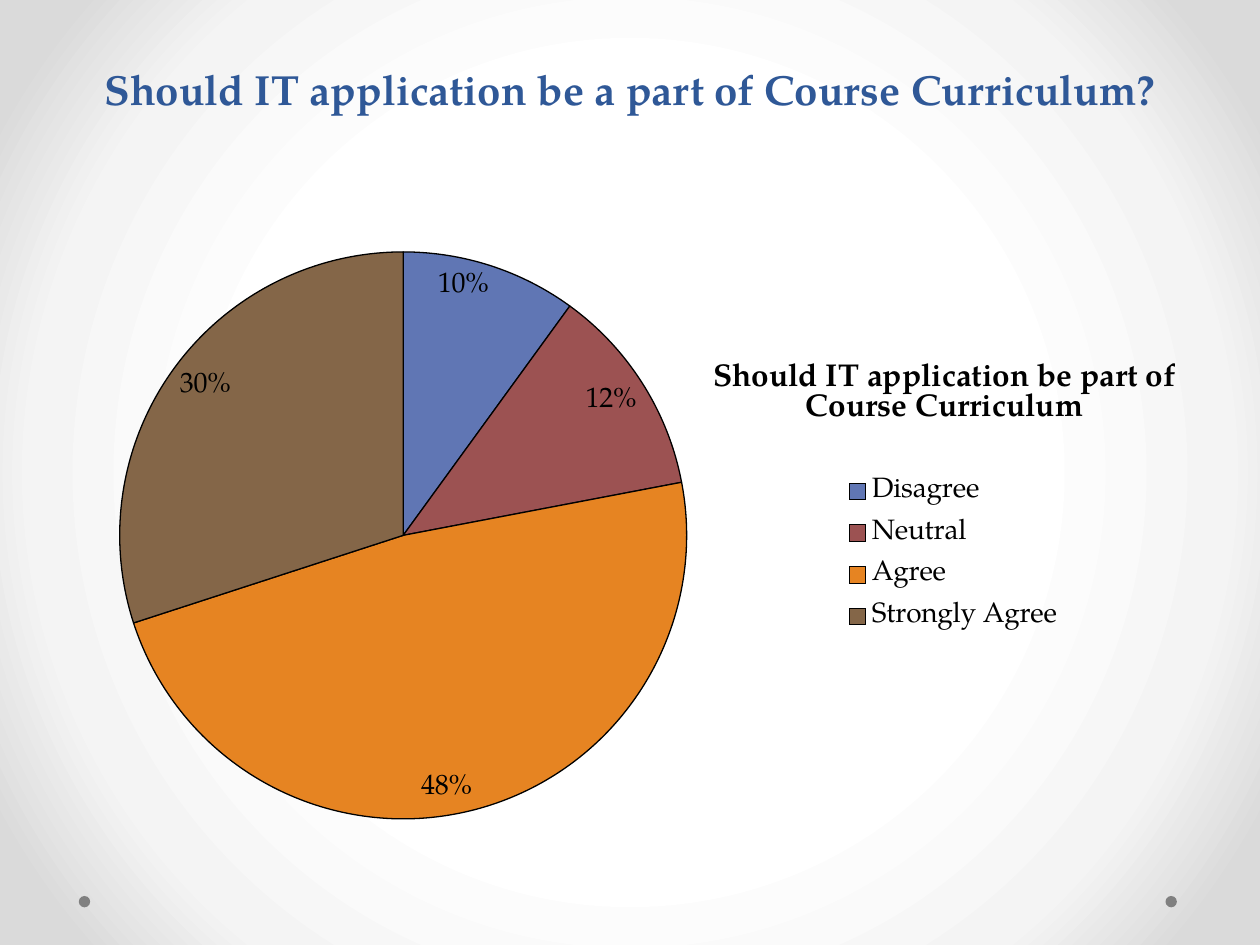
from pptx import Presentation
from pptx.chart.data import CategoryChartData
from pptx.dml.color import RGBColor
from pptx.enum.chart import XL_CHART_TYPE, XL_LABEL_POSITION, XL_LEGEND_POSITION
from pptx.enum.shapes import MSO_SHAPE
from pptx.enum.text import MSO_ANCHOR, PP_ALIGN
from pptx.oxml import parse_xml
from pptx.oxml.ns import nsdecls
from pptx.util import Pt

FONT = "TeX Gyre Pagella"


def rgb(value):
    return RGBColor.from_string(value)


def set_layout(element, x, y, w=None, h=None, inner=False):
    """Place a chart part by fractions of the chart area."""
    target = '<c:layoutTarget val="inner"/>' if inner else ""
    modes = '<c:xMode val="edge"/><c:yMode val="edge"/>'
    sizes = "".join(f'<c:{tag} val="{val}"/>'
                    for tag, val in zip("xywh", (x, y, w, h)) if val is not None)
    layout = element.get_or_add_layout() if hasattr(element, "get_or_add_layout") else None
    if layout is None:
        layout = element.find("{*}layout")
    new = parse_xml(f'<c:layout {nsdecls("c")}><c:manualLayout>'
                    f'{target}{modes}{sizes}</c:manualLayout></c:layout>')
    if layout is not None:
        element.replace(layout, new)
    else:
        element.insert(0 if inner else 1, new)


prs = Presentation()
prs.slide_width, prs.slide_height = Pt(720), Pt(540)
s = prs.slides.add_slide(prs.slide_layouts[6])

# Radial background
s.background.fill.solid()
bg = s.element.xpath("p:cSld/p:bg/p:bgPr")[0]
stops = "".join(f'<a:gs pos="{pos}000"><a:srgbClr val="{color}"/></a:gs>'
                for pos, color in ((50, "FFFFFF"), (76, "F4F4F4"), (92, "DADADA")))
bg.replace(bg[0], parse_xml(
    f'<a:gradFill {nsdecls("a")} rotWithShape="1"><a:gsLst>{stops}</a:gsLst>'
    '<a:path path="circle"><a:fillToRect l="50000" t="50000" r="50000" b="50000"/>'
    '</a:path></a:gradFill>'))

# Corner dots
for left in (45, 666):
    dot = s.shapes.add_shape(MSO_SHAPE.OVAL, Pt(left), Pt(512), Pt(6.5), Pt(6.5))
    dot.shadow.inherit = False
    dot.fill.solid()
    dot.fill.fore_color.rgb = rgb("808080")
    dot.line.fill.background()

# Title
tf = s.shapes.add_textbox(Pt(36), Pt(30), Pt(648), Pt(96)).text_frame
tf.word_wrap = True
tf.vertical_anchor = MSO_ANCHOR.TOP
tf.margin_top = Pt(6)
p = tf.paragraphs[0]
p.alignment = PP_ALIGN.CENTER
r = p.add_run()
r.text = "Should IT application be a part of Course Curriculum?"
r.font.name, r.font.size, r.font.bold = FONT, Pt(24), True
r.font.color.rgb = rgb("2F5897")

# Pie chart
data = CategoryChartData()
data.categories = ["Disagree", "Neutral ", "Agree", "Strongly Agree"]
data.add_series("Should IT application be part of Course Curriculum", (10, 12, 48, 30))
chart = s.shapes.add_chart(XL_CHART_TYPE.PIE, Pt(36), Pt(126), Pt(648), Pt(356.4),
                           data).chart
chart.font.name, chart.font.size = FONT, Pt(10)
chart.font.color.rgb = rgb("000000")

tf = chart.chart_title.text_frame
for i, line in enumerate(("Should IT application be part of", "Course Curriculum")):
    p = tf.add_paragraph() if i else tf.paragraphs[0]
    r = p.add_run()
    r.text = line
    r.font.name, r.font.size, r.font.bold = FONT, Pt(18), True
    r.font.color.rgb = rgb("000000")

chart.has_legend = True
legend = chart.legend
legend.position = XL_LEGEND_POSITION.RIGHT
legend.include_in_layout = False
legend.font.name, legend.font.size = FONT, Pt(16)
legend.font.color.rgb = rgb("000000")

plot = chart.plots[0]
plot.vary_by_categories = True
for i, color in enumerate(("6076B4", "9C5252", "E68422", "846648")):
    fmt = plot.series[0].points[i].format
    fmt.fill.solid()
    fmt.fill.fore_color.rgb = rgb(color)
    fmt.line.color.rgb = rgb("000000")
    fmt.line.width = Pt(0.75)

plot.has_data_labels = True
labels = plot.data_labels
labels.show_percentage, labels.show_value = True, False
labels.number_format, labels.number_format_is_linked = "0%", False
labels.position = XL_LABEL_POSITION.INSIDE_END
labels.font.name, labels.font.size = FONT, Pt(16)
labels.font.color.rgb = rgb("000000")

area = chart.element.xpath("c:chart/c:plotArea")[0]
set_layout(area, 0.05, 0.05, 0.5, 0.91, inner=True)
set_layout(chart.element.xpath("c:chart/c:title")[0], 0.57, 0.22)
set_layout(chart.element.xpath("c:chart/c:legend")[0], 0.68, 0.39, 0.21, 0.29)

prs.save("out.pptx")
